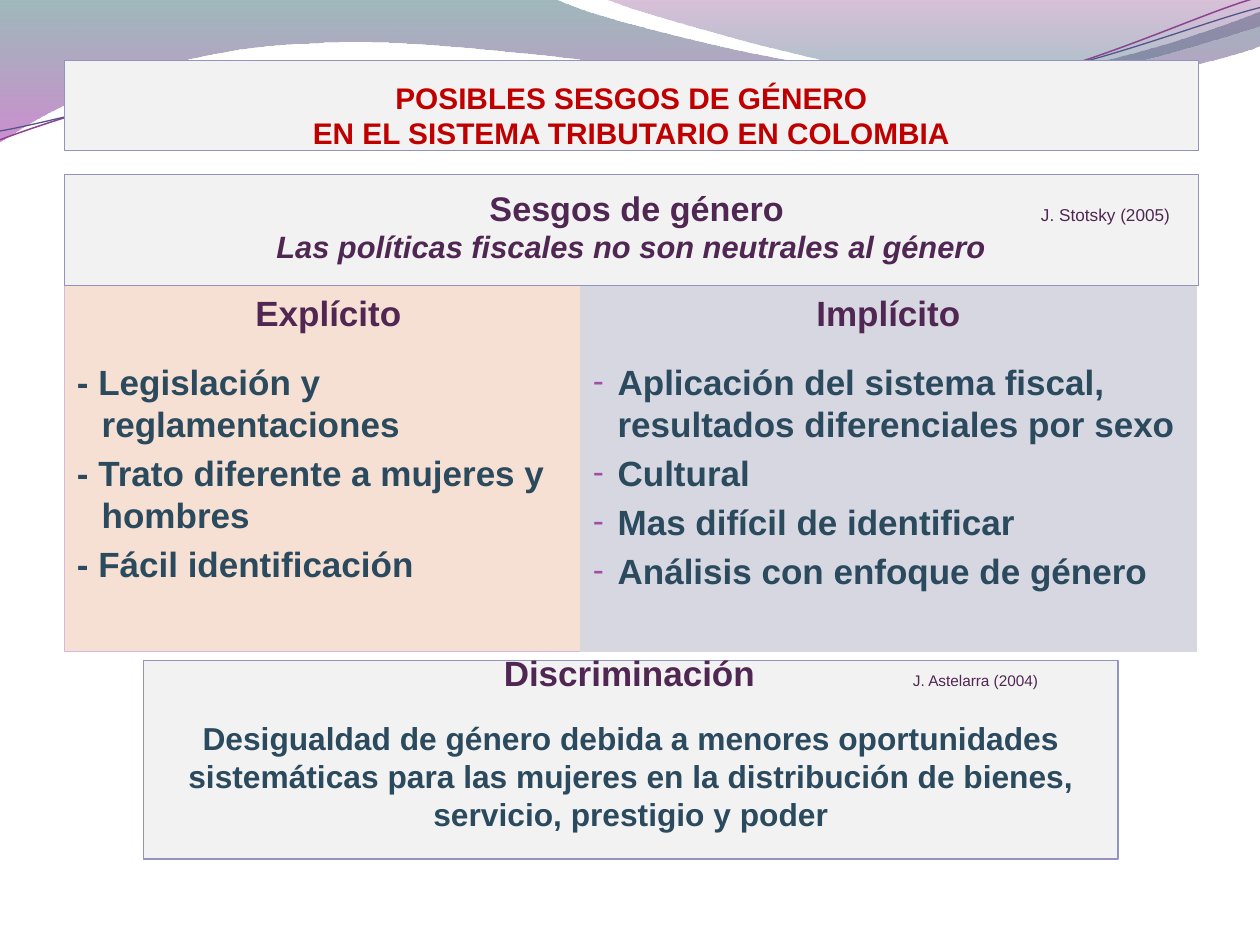
from lxml import etree
from pptx import Presentation
from pptx.dml.color import RGBColor
from pptx.enum.shapes import MSO_SHAPE
from pptx.enum.text import MSO_ANCHOR, MSO_AUTO_SIZE, PP_ALIGN
from pptx.oxml.ns import qn
from pptx.util import Cm, Pt

RECTANGLE = MSO_SHAPE.RECTANGLE
TOP, BOTTOM = MSO_ANCHOR.TOP, MSO_ANCHOR.BOTTOM
LEFT, CENTER = PP_ALIGN.LEFT, PP_ALIGN.CENTER
NO_AUTOFIT = MSO_AUTO_SIZE.NONE

FONT = "Arial"
RED = RGBColor(0xC0, 0x00, 0x00)
PLUM = RGBColor(0x50, 0x26, 0x52)
SLATE = RGBColor(0x2B, 0x4A, 0x5E)
BAND_FILL = RGBColor(0xF2, 0xF2, 0xF2)
BAND_LINE = RGBColor(0x93, 0x94, 0xBE)
PEACH = RGBColor(0xF5, 0xE0, 0xD3)
PEACH_LINE = RGBColor(0xDB, 0xB6, 0xDC)
LILAC = RGBColor(0xD6, 0xD7, 0xE0)
LILAC_LINE = RGBColor(0xD9, 0xD9, 0xD9)
BULLET = RGBColor(0xA0, 0x4D, 0xA3)
TEAL = RGBColor(0x2D, 0x63, 0x68)
VIOLET = RGBColor(0xA5, 0x30, 0xA9)
PURPLE = RGBColor(0x7F, 0x2F, 0x82)
CYAN = RGBColor(0x2F, 0x7B, 0x82)
MAUVE = RGBColor(0x8D, 0x44, 0x90)
INDIGO = RGBColor(0x53, 0x54, 0x8A)

GRID = 2.54  # cm: a tenth of the slide width, the unit of the wave points

# Each wave: points, where a pair is a line and a triple of pairs a Bezier curve
BROAD_WAVE = [
    (0, 0), (4.4, -0.01),
    ((4.76, 0.17), (6.64, 0.63), (7.58, 0.63)),
    ((8.53, 0.63), (9.58, 0.26), (10, 0.09)),
    (10.01, 0.36),
    ((9.83, 0.44), (8.7, 0.76), (7.46, 0.75)),
    ((6.22, 0.75), (3.82, 0.28), (2.57, 0.34)),
    ((1.29, 0.36), (0.46, 0.83), (-0.01, 1.13)),
]
RIGHT_WAVE = [
    (4.79, -0.01),
    ((5.09, 0.11), (6.82, 0.62), (7.69, 0.65)),
    ((8.56, 0.69), (9.61, 0.32), (10, 0.21)),
    (10, 0),
]
UPPER_STRAND = [
    (0, 1.11),
    ((0.48, 0.93), (1.58, 0.57), (2.77, 0.52)),
    ((3.95, 0.47), (5.93, 0.89), (7.13, 0.8)),
    ((8.33, 0.71), (9.38, 0.15), (9.98, -0.02)),
]
LOWER_STRAND = [
    (0, 1.04),
    ((0.47, 0.96), (1.64, 0.61), (2.83, 0.56)),
    ((4.03, 0.51), (5.97, 0.84), (7.17, 0.75)),
    ((8.36, 0.67), (9.41, 0.21), (10, 0.06)),
]


def add_outline(slide, outline, close):
    """Build the outline through its end points, then bend the curved parts."""
    parts = [part if isinstance(part[0], tuple) else (part,) for part in outline]
    start, *ends = [tuple(Cm(n * GRID) for n in part[-1]) for part in parts]
    builder = slide.shapes.build_freeform(*start)
    builder.add_line_segments(ends, close=close)
    shape = builder.convert_to_shape()
    shape.shadow.inherit = False
    for segment, part in zip(list(shape._element.iter(qn("a:lnTo"))), parts[1:]):
        if len(part) == 1:
            continue
        segment.tag = qn("a:cubicBezTo")
        for index, (x, y) in enumerate(part[:-1]):
            control = etree.Element(qn("a:pt"), x=str(Cm(x * GRID) - shape.left),
                                    y=str(Cm(y * GRID) - shape.top))
            segment.insert(index, control)
    return shape


def add_wave(slide, outline, stops):
    """Add a wave filled from top to bottom with (colour, opacity %) stops."""
    wave = add_outline(slide, outline, True)
    wave.line.fill.background()
    wave.fill.gradient()
    wave.fill.gradient_angle = 270
    for position, (stop, (color, _)) in enumerate(zip(wave.fill.gradient_stops, stops)):
        stop.position = position
        stop.color.rgb = color
    for node, (_, opacity) in zip(wave._element.iter(qn("a:srgbClr")), stops):
        etree.SubElement(node, qn("a:alpha"), val=str(opacity * 1000))
    return wave


def add_strand(slide, outline, color, width):
    strand = add_outline(slide, outline, False)
    strand.fill.background()
    strand.line.color.rgb = color
    strand.line.width = Pt(width)
    return strand


def decorate_master(master, slide):
    """Draw the waves and move them behind everything on the master."""
    waves = [
        add_wave(slide, BROAD_WAVE, [(TEAL, 45), (VIOLET, 55)]),
        add_wave(slide, RIGHT_WAVE, [(PURPLE, 30), (CYAN, 45)]),
        add_strand(slide, UPPER_STRAND, MAUVE, 0.85),
        add_strand(slide, LOWER_STRAND, INDIGO, 0.75),
    ]
    for index, wave in enumerate(waves, start=2):
        master.shapes._spTree.insert(index, wave._element)


def style_box(shape, fill, line):
    shape.fill.solid()
    shape.fill.fore_color.rgb = fill
    shape.line.color.rgb = line
    shape.line.width = Pt(0.75)


def place(shape, box):
    shape.left, shape.top, shape.width, shape.height = (Cm(side) for side in box)


def set_frame(frame, anchor, insets):
    frame.word_wrap = True
    frame.auto_size = NO_AUTOFIT
    frame.vertical_anchor = anchor
    (frame.margin_left, frame.margin_top,
     frame.margin_right, frame.margin_bottom) = (Cm(inset) for inset in insets)


def format_run(run, size, color, bold=True, italic=False):
    font = run.font
    font.name, font.size, font.bold, font.italic = FONT, Pt(size), bold, italic
    font.color.rgb = color


def write(paragraph, text, size, color, align=CENTER, italic=False, before=0):
    paragraph.text = text
    paragraph.alignment = align
    paragraph.space_before = Pt(before)
    for run in paragraph.runs:
        format_run(run, size, color, italic=italic)


def set_bullet(paragraph, indent=0, char=None):
    """Hang the paragraph by indent cm, with a coloured bullet if char is given."""
    properties = paragraph._p.get_or_add_pPr()
    properties.set("marL", str(Cm(indent)))
    properties.set("indent", str(-Cm(indent)))
    if char is None:
        etree.SubElement(properties, qn("a:buNone"))
        return
    color = etree.SubElement(properties, qn("a:buClr"))
    etree.SubElement(color, qn("a:srgbClr"), val=str(BULLET))
    etree.SubElement(properties, qn("a:buSzPct"), val="95000")
    etree.SubElement(properties, qn("a:buChar"), char=char)


def fill_title(title, box):
    place(title, box)
    style_box(title, BAND_FILL, BAND_LINE)
    set_frame(title.text_frame, BOTTOM, (0, 0.13, 0, 0))
    write(title.text_frame.paragraphs[0],
          "POSIBLES SESGOS DE GÉNERO\vEN EL SISTEMA TRIBUTARIO EN COLOMBIA", 17, RED)


def fill_column(body, box, colors, heading, items, char=None):
    place(body, box)
    style_box(body, *colors)
    frame = body.text_frame
    set_frame(frame, TOP, (0.25, 0.13, 0.25, 0.13))
    write(frame.paragraphs[0], heading, 20, PLUM, before=4)
    set_bullet(frame.paragraphs[0])
    for number, item in enumerate(items):
        paragraph = frame.add_paragraph()
        write(paragraph, item, 20, SLATE, LEFT, before=4 if number else 15.4)
        set_bullet(paragraph, 0.5, char)


def add_band(slide, box, bottom_inset, heading, citation, tabs, statement):
    """Add a frame with heading and citation set on a centre and a right tab."""
    band = slide.shapes.add_shape(RECTANGLE, *(Cm(side) for side in box))
    band.shadow.inherit = False
    style_box(band, BAND_FILL, BAND_LINE)
    set_frame(band.text_frame, BOTTOM, (0, 0.13, 0, bottom_inset))
    top_line = band.text_frame.paragraphs[0]
    text, size = heading
    write(top_line, f"\t{text}\t", size, PLUM, LEFT)
    source = top_line.add_run()
    source.text, size = citation
    format_run(source, size, PLUM, bold=False)
    stops = etree.SubElement(top_line._p.get_or_add_pPr(), qn("a:tabLst"))
    for position, align in zip(tabs, ("ctr", "r")):
        etree.SubElement(stops, qn("a:tab"), pos=str(Cm(position)), algn=align)
    write(band.text_frame.add_paragraph(), **statement)


def main():
    deck = Presentation()
    deck.slide_width, deck.slide_height = Cm(25.4), Cm(19.05)
    slide = deck.slides.add_slide(deck.slide_layouts[3])
    title, explicit, implicit = slide.placeholders
    decorate_master(deck.slide_master, slide)

    fill_title(title, (1.3, 1.22, 22.86, 1.82))
    fill_column(explicit, (1.3, 5.74, 10.64, 7.39), (PEACH, PEACH_LINE), "Explícito",
                ["- Legislación y reglamentaciones", "- Trato diferente a mujeres y hombres",
                 "- Fácil identificación"])
    fill_column(implicit, (11.7, 5.74, 12.42, 7.39), (LILAC, LILAC_LINE), "Implícito",
                ["Aplicación del sistema fiscal, resultados diferenciales por sexo", "Cultural",
                 "Mas difícil de identificar", "Análisis con enfoque de género"], "-")
    add_band(slide, (2.89, 13.31, 19.65, 4.01), 0.52,
             ("Discriminación", 20), ("J. Astelarra (2004)", 8.8), (9.8, 18.04),
             dict(text="Desigualdad de género debida a menores oportunidades sistemáticas para las "
                       "mujeres en la distribución de bienes, servicio, prestigio y poder",
                  size=18.1, color=SLATE, before=14.8))
    add_band(slide, (1.3, 3.52, 22.86, 2.24), 0.42,
             ("Sesgos de género", 19.5), ("J. Stotsky (2005)", 9.8), (11.54, 22.29),
             dict(text="Las políticas fiscales no son neutrales al género",
                  size=17.6, color=PLUM, italic=True))
    deck.save("out.pptx")


if __name__ == "__main__":
    main()
